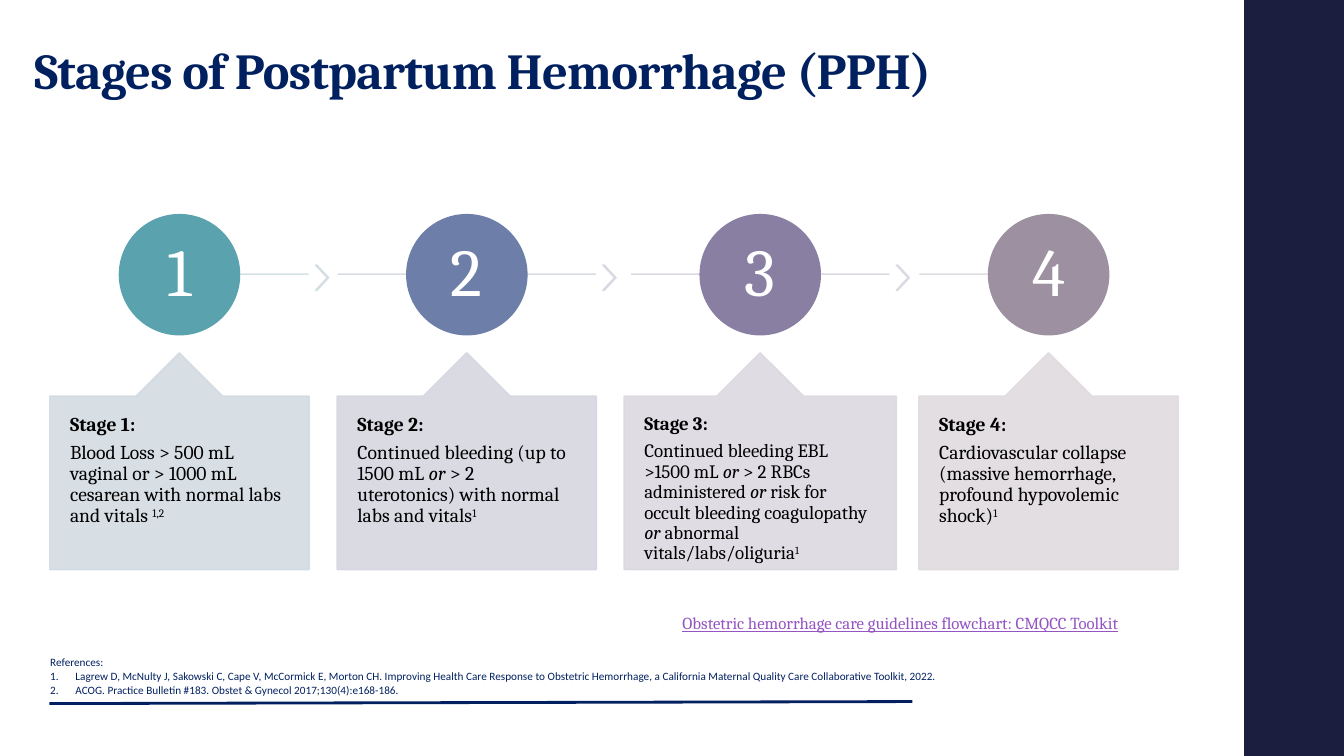
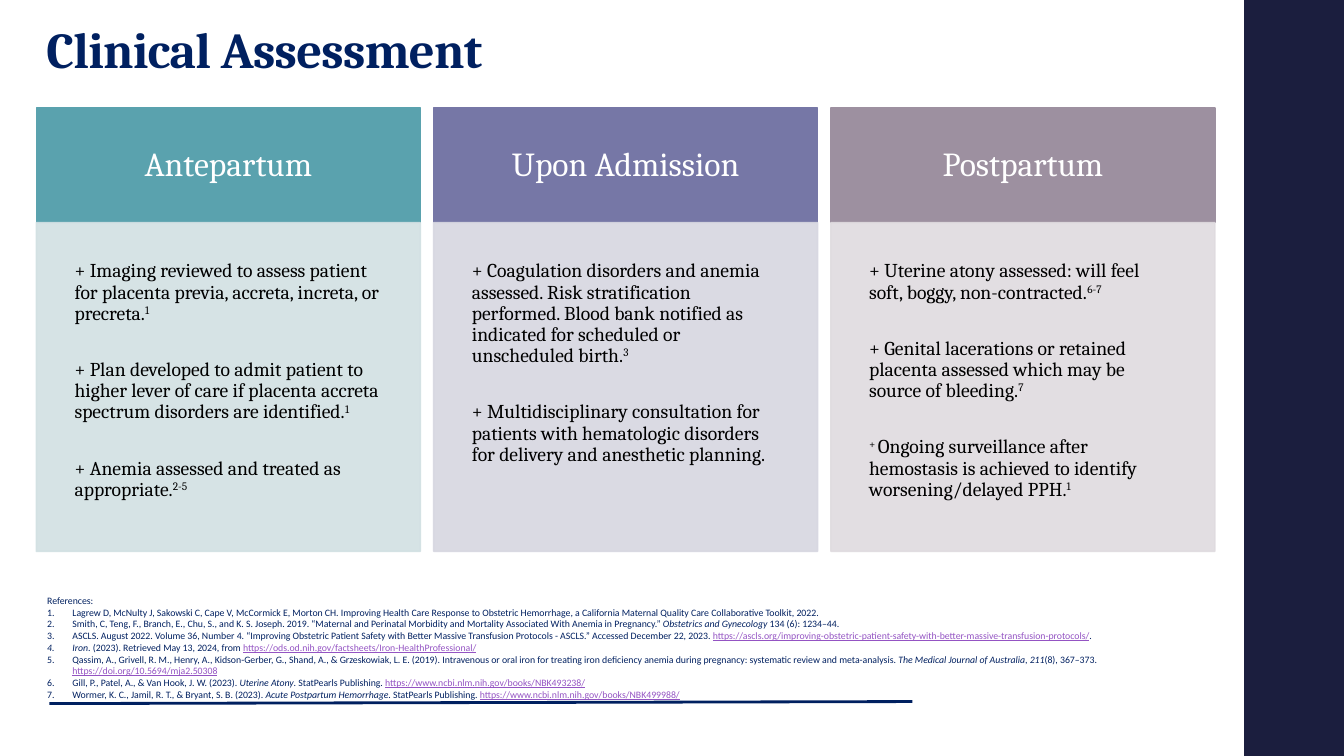
from dataclasses import dataclass

from lxml import etree
from pptx import Presentation
from pptx.dml.color import RGBColor
from pptx.enum.shapes import MSO_CONNECTOR, MSO_SHAPE
from pptx.enum.text import MSO_ANCHOR, MSO_AUTO_SIZE, PP_ALIGN
from pptx.oxml.ns import qn
from pptx.util import Inches, Pt


@dataclass(frozen=True)
class Theme:
    navy: str = "002060"
    band: str = "1B1E3E"
    link: str = "9454C3"
    white: str = "FFFFFF"
    black: str = "000000"
    heading_font: str = "Cambria"
    reference_font: str = "Calibri"
    title_size: float = 36
    number_size: float = 48
    header_size: float = 24
    body_size: float = 14
    dense_size: float = 13.5
    link_size: float = 12
    outline: float = 1.1
    tight: float = 0.9


THEME = Theme()
ITALIC, SUPERSCRIPT, LINK = "*", "^", "~"


def split_marks(text):
    """Yield (piece, mark) pairs; a mark opens and closes a styled piece."""
    piece, mark = "", ""
    for char in text:
        if char in (ITALIC, SUPERSCRIPT, LINK):
            if piece:
                yield piece, mark
            piece, mark = "", "" if mark else char
        else:
            piece += char
    if piece:
        yield piece, mark


class Deck:
    def __init__(self, theme):
        self.theme = theme
        self.presentation = Presentation()
        self.presentation.slide_width = Inches(13.33)
        self.presentation.slide_height = Inches(7.5)
        self.slide = None

    # Slide frame: title, side band and bottom rule
    def new_slide(self, title, left, top, width, height):
        theme = self.theme
        self.slide = self.presentation.slides.add_slide(self.presentation.slide_layouts[5])
        self.shape(MSO_SHAPE.RECTANGLE, 12.35, 0, 1, 7.5, theme.band)
        self.line(0.49, 6.98, 9.05, 6.96, theme.navy, 2)
        placeholder = self.slide.shapes.title
        placeholder.left, placeholder.top = Inches(left), Inches(top)
        placeholder.width, placeholder.height = Inches(width), Inches(height)
        frame = placeholder.text_frame
        frame.auto_size = MSO_AUTO_SIZE.NONE
        frame.vertical_anchor = MSO_ANCHOR.BOTTOM
        self.fill_text(frame, [title], theme.title_size, theme.navy, bold_first=True)
        for run in frame.paragraphs[0].runs:
            run.font._element.set("spc", "-50")

    def set_alpha(self, shape, percent):
        for color in shape._element.spPr.iter(qn("a:srgbClr")):
            etree.SubElement(color, qn("a:alpha")).set("val", str(percent * 1000))

    def shape(self, kind, left, top, width, height, color, alpha=None, adjustments=()):
        shape = self.slide.shapes.add_shape(
            kind, Inches(left), Inches(top), Inches(width), Inches(height))
        shape.shadow.inherit = False
        shape.fill.solid()
        shape.fill.fore_color.rgb = RGBColor.from_string(color)
        shape.line.color.rgb = RGBColor.from_string(color)
        shape.line.width = Pt(self.theme.outline)
        for index, value in enumerate(adjustments):
            shape.adjustments[index] = value
        if alpha:
            self.set_alpha(shape, alpha)
        return shape

    def line(self, start_x, start_y, end_x, end_y, color, width, alpha=None):
        connector = self.slide.shapes.add_connector(
            MSO_CONNECTOR.STRAIGHT, Inches(start_x), Inches(start_y),
            Inches(end_x), Inches(end_y))
        connector.line.color.rgb = RGBColor.from_string(color)
        connector.line.width = Pt(width)
        etree.SubElement(connector._element.spPr, qn("a:effectLst"))
        if alpha:
            self.set_alpha(connector, alpha)

    def text_box(self, left, top, width, height):
        box = self.slide.shapes.add_textbox(
            Inches(left), Inches(top), Inches(width), Inches(height))
        box.text_frame.word_wrap = True
        return box.text_frame

    def inset(self, shape, horizontal, vertical, anchor):
        frame = shape.text_frame
        frame.word_wrap = True
        frame.margin_left = frame.margin_right = Inches(horizontal)
        frame.margin_top = frame.margin_bottom = Inches(vertical)
        frame.vertical_anchor = anchor
        return frame

    def fill_text(self, frame, texts, size, color, font=None, align=PP_ALIGN.LEFT,
                  spacing=THEME.tight, gap=0, bold_first=False):
        for index, text in enumerate(texts):
            paragraph = frame.add_paragraph() if index else frame.paragraphs[0]
            paragraph.alignment = align
            paragraph.line_spacing = spacing
            paragraph.space_after = Pt(gap if index < len(texts) - 1 else 0)
            for piece, mark in split_marks(text):
                run = paragraph.add_run()
                run.text = piece
                run.font.name = font or self.theme.heading_font
                run.font.size = Pt(size)
                run.font.bold = bold_first and index == 0
                run.font.italic = mark == ITALIC
                run.font.underline = mark == LINK
                run.font.color.rgb = RGBColor.from_string(
                    self.theme.link if mark == LINK else color)
                if mark == SUPERSCRIPT:
                    run.font._element.set("baseline", "30000")

    # Circle with a number, and its callout below
    def stage(self, number, center, width, color, tint, size, text):
        theme = self.theme
        circle = self.shape(MSO_SHAPE.OVAL, center - 0.595, 2.13, 1.19, 1.19, color)
        self.fill_text(self.inset(circle, 0.05, 0.05, MSO_ANCHOR.MIDDLE), [str(number)],
                       theme.number_size, theme.white, align=PP_ALIGN.CENTER)
        callout = self.shape(MSO_SHAPE.UP_ARROW_CALLOUT, center - width / 2, 3.5,
                             width, 2.15, tint, 90, (0.5, 0.2, 0.2, 1))
        self.fill_text(self.inset(callout, 0.2, 0.18, MSO_ANCHOR.TOP),
                       [f"Stage {number}:", text], size, theme.black, gap=5, bold_first=True)

    # Column with a coloured header and a pale body
    def column(self, left, header, color, tint, points):
        theme = self.theme
        head = self.shape(MSO_SHAPE.RECTANGLE, left, 1.07, 3.81, 1.14, color)
        self.fill_text(self.inset(head, 0.3, 0.3, MSO_ANCHOR.MIDDLE), [header],
                       theme.header_size, theme.white, align=PP_ALIGN.CENTER)
        body = self.shape(MSO_SHAPE.RECTANGLE, left, 2.21, 3.81, 3.26, tint, 90)
        self.fill_text(self.inset(body, 0.38, 0.38, MSO_ANCHOR.TOP), points,
                       theme.body_size, theme.black, gap=25)

    # Numbered reference list
    def references(self, left, top, width, height, size, spacing, entries):
        frame = self.text_box(left, top, width, height)
        self.fill_text(frame, ["References:", *entries], size, self.theme.navy,
                       self.theme.reference_font, spacing=spacing)
        for paragraph in frame.paragraphs[1:]:
            properties = paragraph._p.get_or_add_pPr()
            properties.set("marL", str(Inches(0.25)))
            properties.set("indent", str(-Inches(0.25)))
            numbering = etree.SubElement(properties, qn("a:buAutoNum"))
            numbering.set("type", "arabicPeriod")


TOOLKIT = ("Lagrew D, McNulty J, Sakowski C, Cape V, McCormick E, Morton CH. Improving Health "
           "Care Response to Obstetric Hemorrhage, a California Maternal Quality Care "
           "Collaborative Toolkit, 2022.")

# Centre, callout width, circle colour, callout tint, text size, text
STAGES = [
    (1.78, 2.57, "5AA2AE", "D3DBE2", THEME.body_size,
     "Blood Loss > 500 mL vaginal or > 1000 mL cesarean with normal labs and vitals ^1,2^"),
    (4.63, 2.57, "6D7FA8", "D6D7E1", THEME.body_size,
     "Continued bleeding (up to 1500 mL *or* > 2 uterotonics) with normal labs and vitals^1^"),
    (7.54, 2.7, "887FA3", "DCD9E0", THEME.dense_size,
     "Continued bleeding EBL >1500 mL *or* > 2 RBCs administered *or* risk for occult "
     "bleeding coagulopathy *or* abnormal vitals/labs/oliguria^1^"),
    (10.4, 2.57, "9D90A0", "DFDBDF", THEME.body_size,
     "Cardiovascular collapse (massive hemorrhage, profound hypovolemic shock)^1^"),
]
LINE_TINTS = ["D2E0E3", "D4D9E2", "D8D7E1", "DDDAE0"]
CHEVRON_TINTS = ["D2DDE3", "D5D8E2", "DAD8E1"]

# Header, header colour, body tint, points
COLUMNS = [
    ("Antepartum", "5AA2AE", "D2E0E3", [
        "+ Imaging reviewed to assess patient for placenta previa, accreta, increta, or "
        "precreta.^1^",
        "+ Plan developed to admit patient to higher lever of care if placenta accreta "
        "spectrum disorders are identified.^1^",
        "+ Anemia assessed and treated as appropriate.^2-5^"]),
    ("Upon Admission", "7677A6", "D7D7E1", [
        "+ Coagulation disorders and anemia assessed. Risk stratification performed. Blood "
        "bank notified as indicated for scheduled or unscheduled birth.^3^",
        "+ Multidisciplinary consultation for patients with hematologic disorders for "
        "delivery and anesthetic planning."]),
    ("Postpartum", "9D90A0", "DFDBDF", [
        "+ Uterine atony assessed: will feel soft, boggy, non-contracted.^6-7^",
        "+ Genital lacerations or retained placenta assessed which may be source of "
        "bleeding.^7^",
        "^+ ^Ongoing surveillance after hemostasis is achieved to identify worsening/delayed "
        "PPH.^1^"]),
]

ASSESSMENT_REFERENCES = [
    TOOLKIT,
    "Smith, C, Teng, F., Branch, E., Chu, S., and K. S. Joseph. 2019. “Maternal and Perinatal "
    "Morbidity and Mortality Associated With Anemia in Pregnancy.” *Obstetrics and "
    "Gynecology* 134 (6): 1234–44.",
    "ASCLS. August 2022. Volume 36, Number 4. “Improving Obstetric Patient Safety with Better "
    "Massive Transfusion Protocols - ASCLS.” Accessed December 22, 2023. "
    "~https://ascls.org/improving-obstetric-patient-safety-with-better-massive-transfusion-"
    "protocols/~.",
    "*Iron*. (2023). Retrieved May 13, 2024, from "
    "~https://ods.od.nih.gov/factsheets/Iron-HealthProfessional/~",
    "Qassim, A., Grivell, R. M., Henry, A., Kidson-Gerber, G., Shand, A., & Grzeskowiak, L. E. "
    "(2019). Intravenous or oral iron for treating iron deficiency anemia during pregnancy: "
    "systematic review and meta-analysis. *The Medical Journal of Australia*, *211*(8), "
    "367–373. ~https://doi.org/10.5694/mja2.50308~",
    "Gill, P., Patel, A., & Van Hook, J. W. (2023). *Uterine Atony*. StatPearls Publishing. "
    "~https://www.ncbi.nlm.nih.gov/books/NBK493238/~",
    "Wormer, K. C., Jamil, R. T., & Bryant, S. B. (2023). *Acute Postpartum Hemorrhage*. "
    "StatPearls Publishing. ~https://www.ncbi.nlm.nih.gov/books/NBK499988/~",
]


def build_stages(deck):
    deck.new_slide("Stages of Postpartum Hemorrhage (PPH)", 0.24, 0.11, 11.96, 0.94)
    reach, last = 1.28, len(STAGES) - 1
    for index, (center, *details) in enumerate(STAGES):
        start = center - reach if index > 0 else center
        end = center + reach if index < last else center
        deck.line(start, 2.72, end, 2.72, LINE_TINTS[index], THEME.outline, 90)
        if index < last:
            deck.shape(MSO_SHAPE.CHEVRON, end + 0.07, 2.63, 0.13, 0.25,
                       CHEVRON_TINTS[index], 90, (0.9,))
        deck.stage(index + 1, center, *details)
    deck.references(0.4, 6.44, 10.63, 0.67, 8, 1.07, [
        TOOLKIT, "ACOG. Practice Bulletin #183. Obstet & Gynecol 2017;130(4):e168-186."])
    deck.fill_text(deck.text_box(6.67, 6.03, 5, 0.3),
                   ["~Obstetric hemorrhage care guidelines flowchart: CMQCC Toolkit~"],
                   THEME.link_size, THEME.link, spacing=1.0)


def build_assessment(deck):
    deck.new_slide("Clinical Assessment", 0.36, 0, 11.69, 0.84)
    for index, column in enumerate(COLUMNS):
        deck.column(0.36 + 3.94 * index, *column)
    deck.references(0.37, 5.85, 11.88, 1.16, 7, 1.0, ASSESSMENT_REFERENCES)


def main():
    deck = Deck(THEME)
    build_stages(deck)
    build_assessment(deck)
    deck.presentation.save("out.pptx")


if __name__ == "__main__":
    main()
